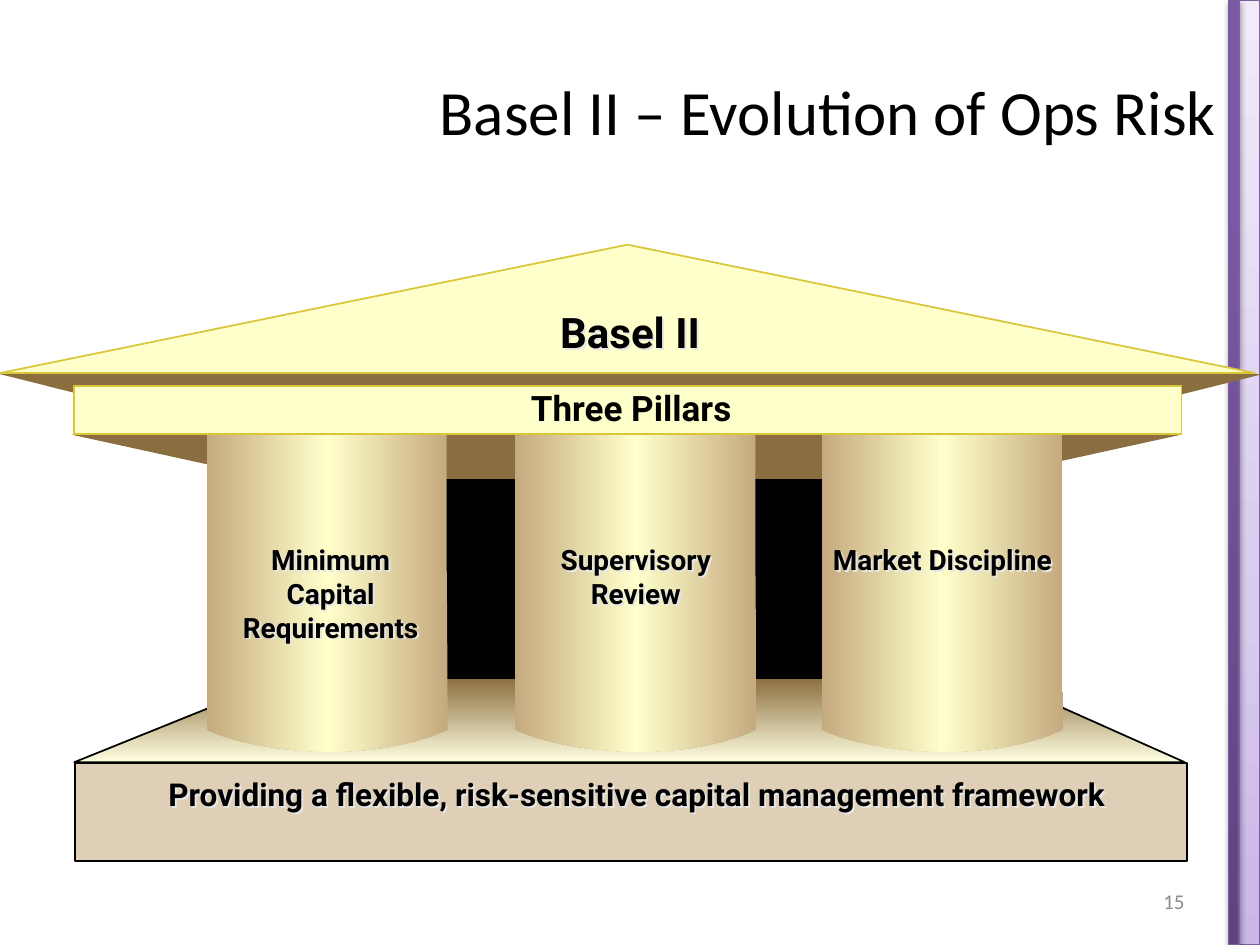
from lxml import etree
from pptx import Presentation
from pptx.dml.color import RGBColor
from pptx.enum import shapes as kinds, text as txt
from pptx.oxml import parse_xml
from pptx.oxml.ns import nsdecls, qn
from pptx.util import Pt

BLACK = RGBColor(0, 0, 0)
GREY = RGBColor(0x8C, 0x8C, 0x8C)
LIGHT = RGBColor(0xE6, 0xE6, 0xE6)
BROWN = RGBColor(0x8B, 0x6E, 0x3F)
CREAM = RGBColor(0xFF, 0xFF, 0xCC)
PALE = RGBColor(0xFF, 0xFF, 0xE1)
GOLD = RGBColor(0xD9, 0xC6, 0x39)
SAND = RGBColor(0xDE, 0xCF, 0xB6)
TAN = RGBColor(0xC5, 0xAA, 0x7F)
PURPLE = RGBColor(0x7D, 0x60, 0xA0)
LILAC = [(0, RGBColor(0xC9, 0xB5, 0xE8)), (35, RGBColor(0xD8, 0xCB, 0xEE)),
         (100, RGBColor(0xF0, 0xEA, 0xF9))]
VIOLET = [(0, RGBColor(0x5F, 0x44, 0x80)), (80, RGBColor(0x7B, 0x58, 0xA6)),
          (100, RGBColor(0x7C, 0x57, 0xA8))]
ROUND = [(0, TAN), (50, CREAM), (100, TAN)]

SHAPE = kinds.MSO_SHAPE
ALIGN = txt.PP_ALIGN


def shade(shape, color, alpha, blur, dist, angle):
    """Give a shape an outer shadow."""
    shape.shadow.inherit = False
    effects = shape._element.spPr.find(qn("a:effectLst"))
    effects.append(parse_xml(
        f'<a:outerShdw {nsdecls("a")} blurRad="{Pt(blur)}" dist="{Pt(dist)}" '
        f'dir="{angle * 60000}" algn="ctr" rotWithShape="0">'
        f'<a:srgbClr val="{color}"><a:alpha val="{alpha * 1000}"/></a:srgbClr>'
        '</a:outerShdw>'))


def blend(fill, stops, angle):
    """Gradient with any number of stops, angle clockwise."""
    fill.gradient()
    fill.gradient_angle = -angle % 360
    rows = fill._xPr.find(qn("a:gradFill")).find(qn("a:gsLst"))
    for old in list(rows):
        rows.remove(old)
    for pos, color in stops:
        stop = etree.SubElement(rows, qn("a:gs"), pos=str(pos * 1000))
        etree.SubElement(stop, qn("a:srgbClr"), val=str(color))


def paint(shape, fill, line=None, width=1, angle=0):
    shape.shadow.inherit = False
    if isinstance(fill, list):
        blend(shape.fill, fill, angle)
    else:
        shape.fill.solid()
        shape.fill.fore_color.rgb = fill
    if line is None:
        shape.line.fill.background()
    else:
        shape.line.color.rgb = line
        shape.line.width = Pt(width)


def block(slide, kind, box, *style):
    shape = slide.shapes.add_shape(kind, *map(Pt, box))
    paint(shape, *style)
    return shape


def outline(slide, points, *style):
    dots = [(Pt(x), Pt(y)) for x, y in points]
    pen = slide.shapes.build_freeform(*dots[0], scale=1.0)
    pen.add_line_segments(dots[1:], close=True)
    shape = pen.convert_to_shape()
    paint(shape, *style)
    return shape


def bend(shape):
    """Turn every three line ends into one cubic curve."""
    lines = list(shape._element.iter(qn("a:lnTo")))
    for i in range(0, len(lines), 3):
        curve = etree.Element(qn("a:cubicBezTo"))
        lines[i].addprevious(curve)
        for line in lines[i:i + 3]:
            curve.append(line[0])
            line.getparent().remove(line)


def pillar(slide, x):
    rim = [(0, 232.5),
           (0, 342), (0, 279.4), (0, 417),
           (28.8, 430), (93, 437), (137.8, 417),
           (137.2, 266.4), (137.2, 378), (137.2, 233.3),
           (86, 220.4), (27.5, 229), (0, 232.5)]
    bend(outline(slide, [(x + dx, y) for dx, y in rim], ROUND))


def side(slide, box, stops, alpha, dist):
    bar = block(slide, SHAPE.ROUND_2_DIAG_RECTANGLE, box, stops, PURPLE, 0.75, 270)
    bar.adjustments[0] = 0
    shade(bar, BLACK, alpha, 3.1, dist, 90)


def label(slide, words, box, size, font="Roboto", color=BLACK, align=ALIGN.CENTER,
          bold=True, anchor=txt.MSO_ANCHOR.TOP, glow=False):
    shape = slide.shapes.add_textbox(*map(Pt, box))
    frame = shape.text_frame
    frame.word_wrap = True
    frame.vertical_anchor = anchor
    para = frame.paragraphs[0]
    para.text = words
    para.alignment = align
    font_of = para.runs[0].font
    font_of.size = Pt(size)
    font_of.bold = bold
    font_of.color.rgb = color
    font_of.name = font
    if glow:
        shape.fill.background()
        shade(shape, LIGHT, 100, 0, 1.6, 45)


def main():
    deck = Presentation()
    deck.slide_width, deck.slide_height = Pt(720), Pt(540)
    slide = deck.slides.add_slide(deck.slide_layouts[6])

    # Side bars, title and page number
    side(slide, (707.8, 0, 12.2, 540), LILAC, 38, 1.6)
    side(slide, (702, 0, 6, 540), VIOLET, 35, 1.8)
    plain = dict(font="Calibri", align=ALIGN.RIGHT, bold=False,
                 anchor=txt.MSO_ANCHOR.MIDDLE)
    label(slide, "Basel II – Evolution of Ops Risk", (90, 36, 612, 54), 36, **plain)
    label(slide, "15", (516, 500.4, 168, 28.8), 12, color=GREY, **plain)

    # Undersides of the roof and beam, back wall, floor
    outline(slide, [(0, 213.8), (180, 259), (541, 259), (721.4, 213.8)], BROWN)
    outline(slide, [(41, 248.4), (199.4, 283), (517, 283), (675, 248.4)], BROWN)
    block(slide, SHAPE.RECTANGLE, (140.4, 274.3, 439.2, 135.4), BLACK, BLACK)
    outline(slide, [(42.5, 435.6), (162, 387.4), (569, 387.4), (677, 435.6)],
            [(0, BROWN), (100, PALE)], BLACK, 1, 90)

    # Pillars and base
    for x in (294.4, 118, 469.6):
        pillar(slide, x)
    block(slide, SHAPE.RECTANGLE, (43, 435.8, 635.2, 56.2), SAND, BLACK)

    # Pillar and base labels
    for words, x, width, height in (
            ("Supervisory Review", 300, 126.7, 46),
            ("Market Discipline", 465.8, 145.4, 46),
            ("Minimum Capital Requirements", 121.7, 134.6, 64.8)):
        label(slide, words, (x, 306.7, width, height), 16, glow=True)
    label(slide, "Providing a flexible, risk-sensitive capital management framework",
          (79, 439.2, 570, 50), 18, glow=True)

    # Roof and beam
    block(slide, SHAPE.ISOSCELES_TRIANGLE, (0, 139.8, 717.2, 73.4), CREAM, GOLD)
    block(slide, SHAPE.RECTANGLE, (42.3, 220.4, 632.9, 27.6), CREAM, GOLD)
    label(slide, "Basel II", (136.8, 171.4, 446.4, 36), 24, glow=True)
    label(slide, "Three Pillars", (137.5, 217.6, 446.4, 31), 20)

    deck.save("out.pptx")


if __name__ == "__main__":
    main()
